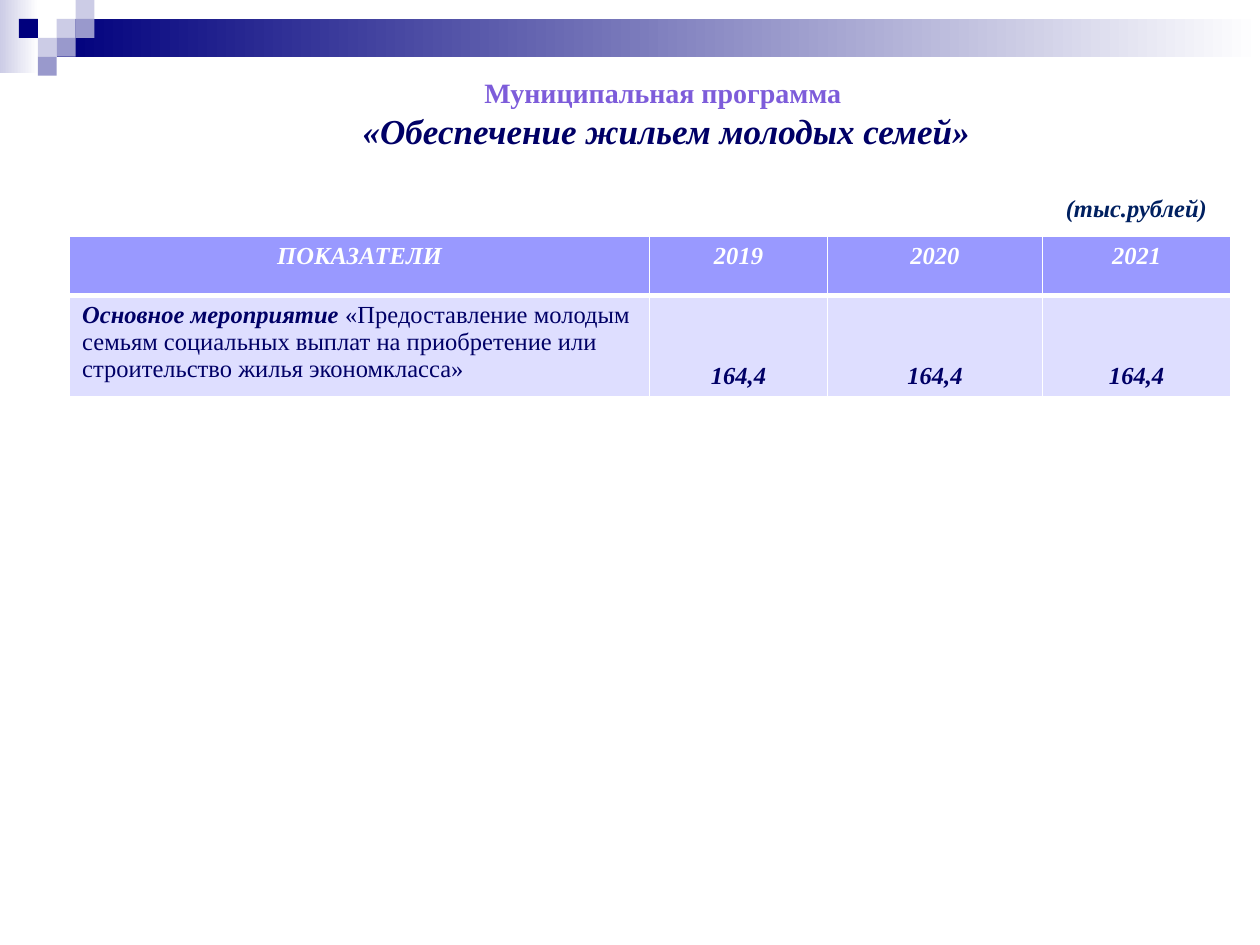
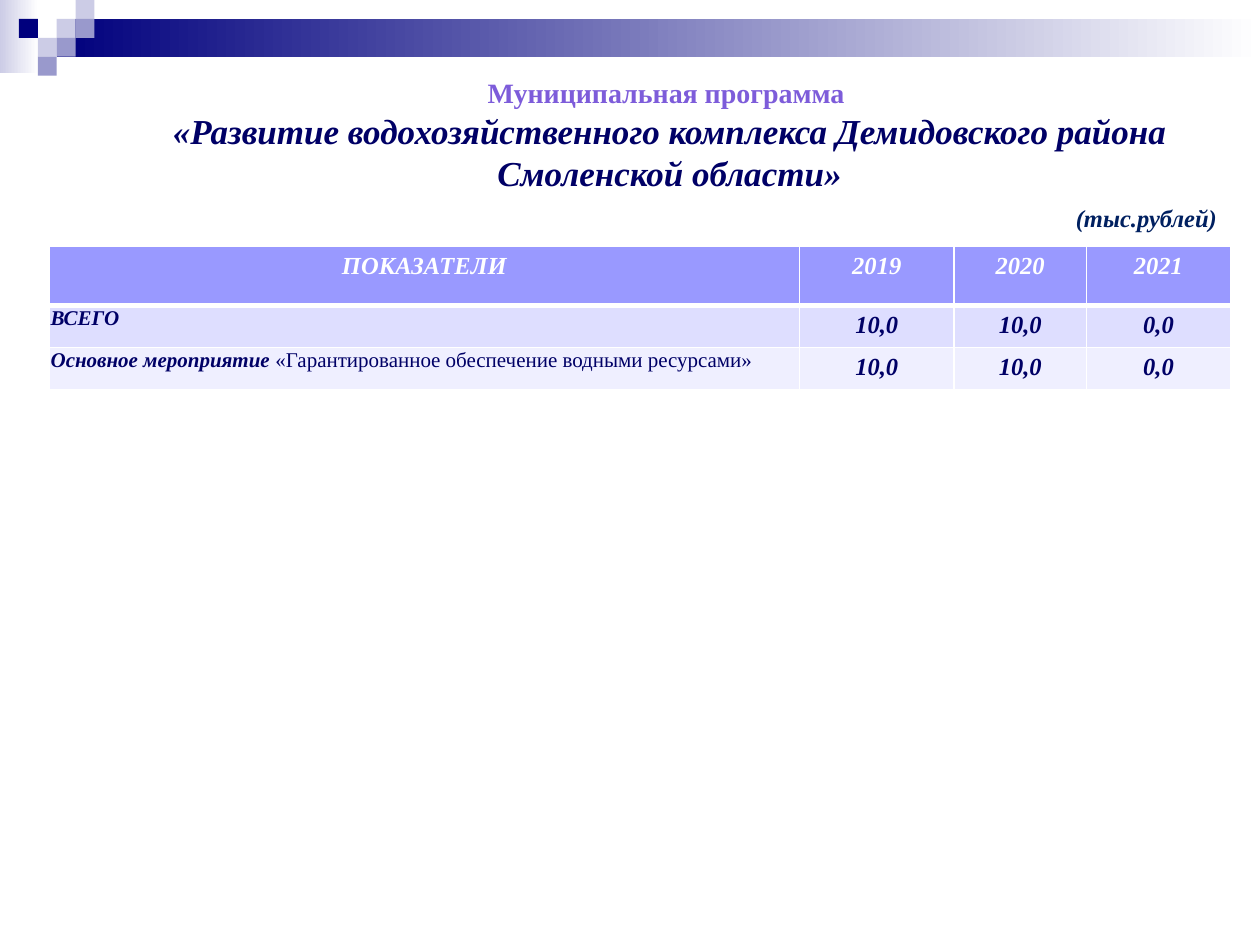
from dataclasses import dataclass

from lxml.etree import SubElement
from pptx import Presentation
from pptx.dml.color import RGBColor
from pptx.enum.shapes import MSO_SHAPE as SHAPE
from pptx.enum.text import MSO_ANCHOR as ANCHOR, PP_ALIGN as ALIGN
from pptx.oxml.ns import qn
from pptx.util import Pt

FONT = "Times New Roman"
COLORS = {
    "navy": "00007D", "mid": "9999CC", "pale": "CCCCE6", "white": "FFFFFF",
    "violet": "7D5CDA", "text": "000066", "unit": "002060",
    "header": "9999FF", "row_dark": "DEDEFF", "row_light": "EFEFFF",
}
UNIT = 10.8  # side of one square in the corner mosaic
HEADINGS = ["ПОКАЗАТЕЛИ", "2019", "2020", "2021"]
ROW_FILLS = ["row_dark", "row_light"]


@dataclass
class Block:
    left: float
    top: float
    width: float
    height: float
    color: str
    fade: bool = False


@dataclass
class Span:
    text: str
    size: float
    color: str
    bold: bool = True
    italic: bool = True


@dataclass
class Row:
    label: str
    detail: str
    values: list[str]
    height: float


@dataclass
class Program:
    name: str
    title_box: tuple[float, float, float, float]
    unit_at: tuple[float, float]
    table_at: tuple[float, float]
    columns: list[float]
    rows: list[Row]
    label_size: float
    tight_labels: bool
    value_anchor: ANCHOR


def square(col: int, row: int, color: str) -> Block:
    return Block(col * UNIT, row * UNIT, UNIT, UNIT, color)


DECOR = [
    Block(0, 0, 22, 41.8, "pale", fade=True),
    Block(3 * UNIT, UNIT, 720 - 3 * UNIT, 2 * UNIT, "navy", fade=True),
    square(3, 1, "pale"), square(4, 0, "pale"), square(4, 1, "mid"),
    square(2, 2, "pale"), square(1, 1, "navy"), square(3, 2, "mid"),
    square(2, 3, "mid"),
]

PROGRAMS = [
    Program(
        "«Обеспечение жильем молодых семей»",
        (112.3, 39.6, 537, 51), (602, 106.5), (39.8, 135),
        [331.5, 101.5, 123, 107.5],
        [Row("Основное мероприятие ",
             "«Предоставление молодым семьям социальных выплат на "
             "приобретение или строительство жилья экономкласса»",
             ["164,4"] * 3, 56.5)],
        14, False, ANCHOR.BOTTOM),
    Program(
        "«Развитие водохозяйственного комплекса Демидовского района "
        "Смоленской области»",
        (73.4, 39.6, 618.5, 75), (607.7, 112.3), (28.3, 140.7),
        [428.5, 88.5, 75.5, 82.5],
        [Row("ВСЕГО", "", ["10,0", "10,0", "0,0"], 24),
         Row("Основное мероприятие ",
             "«Гарантированное обеспечение водными ресурсами»",
             ["10,0", "10,0", "0,0"], 24)],
        12, True, ANCHOR.TOP),
]


def rgb(name: str) -> RGBColor:
    return RGBColor.from_string(COLORS[name])


def draw_block(slide, block: Block) -> None:
    sp = slide.shapes.add_shape(
        SHAPE.RECTANGLE, Pt(block.left), Pt(block.top),
        Pt(block.width), Pt(block.height))
    sp.shadow.inherit = False
    sp.line.fill.background()
    if block.fade:
        sp.fill.gradient()
        sp.fill.gradient_angle = 0
        for stop, color in zip(sp.fill.gradient_stops, (block.color, "white")):
            stop.color.rgb = rgb(color)
    else:
        sp.fill.solid()
        sp.fill.fore_color.rgb = rgb(block.color)


def write(p, spans: list[Span], align: ALIGN = ALIGN.LEFT) -> None:
    p.alignment = align
    for span in spans:
        r = p.add_run()
        r.text = span.text
        r.font.name = FONT
        r.font.size = Pt(span.size)
        r.font.bold = span.bold
        r.font.italic = span.italic
        r.font.color.rgb = rgb(span.color)


def add_text(slide, box: tuple[float, float, float, float],
             paragraphs: list[Span], align: ALIGN, wrap: bool = True) -> None:
    tf = slide.shapes.add_textbox(*map(Pt, box)).text_frame
    tf.word_wrap = wrap
    for i, span in enumerate(paragraphs):
        p = tf.add_paragraph() if i else tf.paragraphs[0]
        write(p, [span], align)


def style_cell(cell, fill: str, top: float, bottom: float) -> None:
    """Fill a cell and give it white borders; the fill follows the lines."""
    cell.fill.solid()
    cell.fill.fore_color.rgb = rgb(fill)
    tc_pr = cell._tc.get_or_add_tcPr()
    borders = {"a:lnL": 1, "a:lnR": 1, "a:lnT": top, "a:lnB": bottom}
    for i, (tag, width) in enumerate(borders.items()):
        ln = SubElement(tc_pr, qn(tag), w=str(Pt(width)))
        solid = SubElement(ln, qn("a:solidFill"))
        SubElement(solid, qn("a:srgbClr"), val=COLORS["white"])
        tc_pr.insert(i, ln)


def add_program_table(slide, program: Program) -> None:
    heights = [33.8] + [row.height for row in program.rows]
    table = slide.shapes.add_table(
        len(heights), len(HEADINGS), *map(Pt, program.table_at),
        Pt(sum(program.columns)), Pt(sum(heights))).table
    for column, width in zip(table.columns, program.columns):
        column.width = Pt(width)
    for row, height in zip(table.rows, heights):
        row.height = Pt(height)

    # Header row
    for c, heading in enumerate(HEADINGS):
        cell = table.cell(0, c)
        style_cell(cell, "header", 1, 3)
        write(cell.text_frame.paragraphs[0], [Span(heading, 14, "white")],
              ALIGN.CENTER)

    # Data rows
    for i, row in enumerate(program.rows):
        cells = table.rows[i + 1].cells
        for cell in cells:
            style_cell(cell, ROW_FILLS[i % 2], 1 if i else 3, 1)
        label, *values = cells
        spans = [Span(row.label, program.label_size, "text")]
        if row.detail:
            spans.append(Span(row.detail, program.label_size, "text",
                              bold=False, italic=False))
        write(label.text_frame.paragraphs[0], spans)
        if program.tight_labels:
            label.margin_left = label.margin_right = label.margin_top = Pt(0.7)
            label.margin_bottom = Pt(0)
        for cell, value in zip(values, row.values):
            cell.vertical_anchor = program.value_anchor
            write(cell.text_frame.paragraphs[0], [Span(value, 14, "text")],
                  ALIGN.CENTER)


def add_program_slide(prs, program: Program) -> None:
    slide = prs.slides.add_slide(prs.slide_layouts[6])
    for block in DECOR:
        draw_block(slide, block)
    add_text(slide, program.title_box,
             [Span("Муниципальная программа ", 16, "violet", italic=False),
              Span(program.name, 20, "text")], ALIGN.CENTER)
    add_program_table(slide, program)
    add_text(slide, (*program.unit_at, 95.8, 24.5),
             [Span("(тыс.рублей)", 14, "unit")], ALIGN.LEFT, wrap=False)


def main() -> None:
    prs = Presentation()
    prs.slide_width, prs.slide_height = Pt(720), Pt(540)
    for program in PROGRAMS:
        add_program_slide(prs, program)
    prs.save("out.pptx")


if __name__ == "__main__":
    main()
